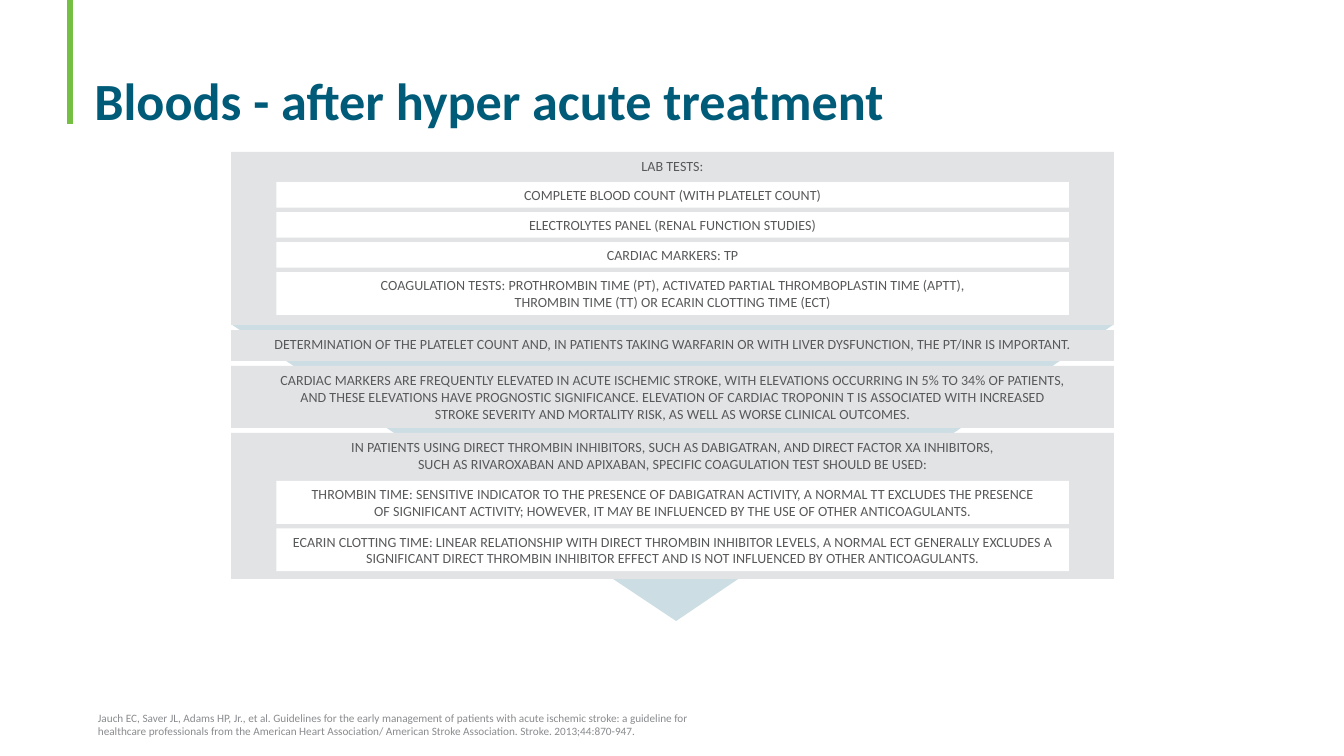
from lxml import etree
from pptx import Presentation
from pptx.dml.color import RGBColor
from pptx.enum import shapes, text
from pptx.oxml.ns import qn
from pptx.util import Pt

TITLE = "Bloods - after hyper acute treatment"
SOURCE = (
    "Jauch EC, Saver JL, Adams HP, Jr., et al. Guidelines for the early management of "
    "patients with acute ischemic stroke: a guideline for healthcare professionals from "
    "the American Heart Association/ American Stroke Association. Stroke. 2013;44:870-947."
)
BANDS = [
    {"high": 92.75, "lines": ["LAB TESTS:"], "inset": 16.1, "cards": [
        (13.7, ["COMPLETE BLOOD COUNT (WITH PLATELET COUNT)"]),
        (13.7, ["ELECTROLYTES PANEL (RENAL FUNCTION STUDIES)"]),
        (13.7, ["CARDIAC MARKERS: TP"]),
        (23, ["COAGULATION TESTS: PROTHROMBIN TIME (PT), ACTIVATED PARTIAL THROMBOPLASTIN TIME (APTT),",
              "THROMBIN TIME (TT) OR ECARIN CLOTTING TIME (ECT)"]),
    ]},
    {"high": 16.5, "lines": [
        "DETERMINATION OF THE PLATELET COUNT AND, IN PATIENTS TAKING WARFARIN "
        "OR WITH LIVER DYSFUNCTION, THE PT/INR IS IMPORTANT."], "inset": 0, "cards": []},
    {"high": 33.2, "lines": [
        "CARDIAC MARKERS ARE FREQUENTLY ELEVATED IN ACUTE ISCHEMIC STROKE, "
        "WITH ELEVATIONS OCCURRING IN 5% TO 34% OF PATIENTS,",
        "AND THESE ELEVATIONS HAVE PROGNOSTIC SIGNIFICANCE. "
        "ELEVATION OF CARDIAC TROPONIN T IS ASSOCIATED WITH INCREASED",
        "STROKE SEVERITY AND MORTALITY RISK, AS WELL AS WORSE CLINICAL OUTCOMES."],
        "inset": 0, "cards": []},
    {"high": 78.25, "lines": [
        "IN PATIENTS USING DIRECT THROMBIN INHIBITORS, SUCH AS DABIGATRAN, AND DIRECT FACTOR XA INHIBITORS,",
        "SUCH AS RIVAROXABAN AND APIXABAN, SPECIFIC COAGULATION TEST SHOULD BE USED:"],
        "inset": 25.7, "cards": [
        (23, ["THROMBIN TIME: SENSITIVE INDICATOR TO THE PRESENCE OF DABIGATRAN ACTIVITY, "
              "A NORMAL TT EXCLUDES THE PRESENCE",
              "OF SIGNIFICANT ACTIVITY; HOWEVER, IT MAY BE INFLUENCED BY THE USE OF OTHER ANTICOAGULANTS."]),
        (23, ["ECARIN CLOTTING TIME: LINEAR RELATIONSHIP WITH DIRECT THROMBIN INHIBITOR LEVELS, "
              "A NORMAL ECT GENERALLY EXCLUDES A SIGNIFICANT DIRECT THROMBIN INHIBITOR EFFECT "
              "AND IS NOT INFLUENCED BY OTHER ANTICOAGULANTS."]),
    ]},
]
THEME = {
    "font": "Calibri",
    "title": (28, "005B79"), "body": (7.5, "58595B"), "source": (6, "898B8E"),
    "band": "E2E3E4", "card": "FFFFFF", "arrow": "005B79", "rule": "75C043",
}
LEFT, TOP, WIDE, GAP = 123.8, 81.4, 473, 2.7
PAD, SPACE = 24.2, 2.4

TOPMOST, MIDDLE, BOTTOM = (
    text.MSO_ANCHOR.TOP, text.MSO_ANCHOR.MIDDLE, text.MSO_ANCHOR.BOTTOM)


def write(shape, lines, style, anchor, pads, align=text.PP_ALIGN.LEFT, bold=False):
    size, color = THEME[style]
    frame = shape.text_frame
    frame.auto_size = text.MSO_AUTO_SIZE.NONE
    frame.word_wrap = True
    frame.vertical_anchor = anchor
    frame.margin_left, frame.margin_top, frame.margin_right, frame.margin_bottom = map(Pt, pads)
    for i, line in enumerate(lines):
        para = frame.add_paragraph() if i else frame.paragraphs[0]
        para.alignment = align
        run = para.add_run()
        run.text = line
        font = run.font
        font.name, font.size, font.bold = THEME["font"], Pt(size), bold
        font.color.rgb = RGBColor.from_string(color)
    return frame


def block(kind, left, top, wide, high, fill):
    shape = slide.shapes.add_shape(kind, Pt(left), Pt(top), Pt(wide), Pt(high))
    shape.shadow.inherit = False
    shape.fill.solid()
    shape.fill.fore_color.rgb = RGBColor.from_string(THEME[fill])
    shape.line.fill.background()
    return shape


def panel(left, top, wide, high, fill, lines, anchor, pad):
    shape = block(shapes.MSO_SHAPE.RECTANGLE, left, top, wide, high, fill)
    write(shape, lines, "body", anchor, (7.2, pad, 7.2, 0), text.PP_ALIGN.CENTER)


deck = Presentation()
deck.slide_width, deck.slide_height = Pt(720), Pt(405)
slide = deck.slides.add_slide(deck.slide_layouts[5])

rule = slide.shapes.add_connector(shapes.MSO_CONNECTOR.STRAIGHT, Pt(37.5), Pt(0), Pt(37.5), Pt(66.5))
rule.line.color.rgb = RGBColor.from_string(THEME["rule"])
rule.line.width = Pt(3)
etree.SubElement(rule.element.spPr, qn("a:effectLst"))

title = slide.shapes.title
title.left, title.top, title.width, title.height = map(Pt, (45.6, 22.5, 631.5, 51))
frame = write(title, [TITLE], "title", BOTTOM, (5, 2.7, 5, 2.7), bold=True)
frame.paragraphs[0].line_spacing = 0.9

source = slide.shapes.add_textbox(Pt(45.4), Pt(378), Pt(333.4), Pt(21))
write(source, [SOURCE], "source", BOTTOM, (7.2, 3.6, 7.2, 3.6))

arrow = block(shapes.MSO_SHAPE.ISOSCELES_TRIANGLE, LEFT, 173.7, WIDE, 159, "arrow")
arrow.adjustments[0] = 0.5 - 0.004
arrow.rotation = 180
tint = arrow.element.spPr.find(qn("a:solidFill"))[0]
etree.SubElement(tint, qn("a:alpha"), val="20000")

top = TOP
for band in BANDS:
    panel(LEFT, top, WIDE, band["high"], "band", band["lines"], TOPMOST, 2.9)
    y = top + band["inset"]
    for high, lines in band["cards"]:
        panel(LEFT + PAD, y, WIDE - 2 * PAD, high, "card", lines, MIDDLE, 0)
        y += high + SPACE
    top += band["high"] + GAP

deck.save("out.pptx")
